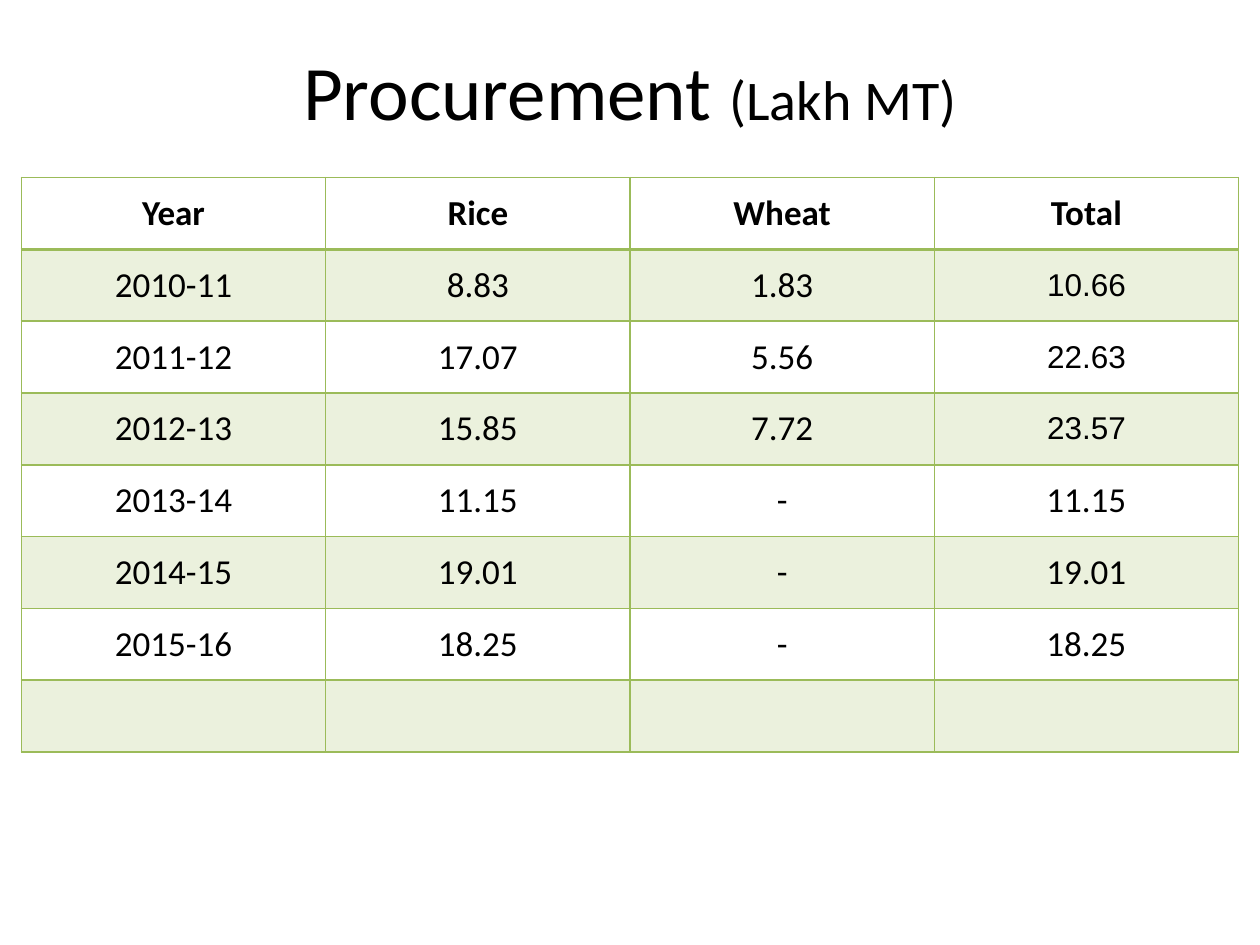
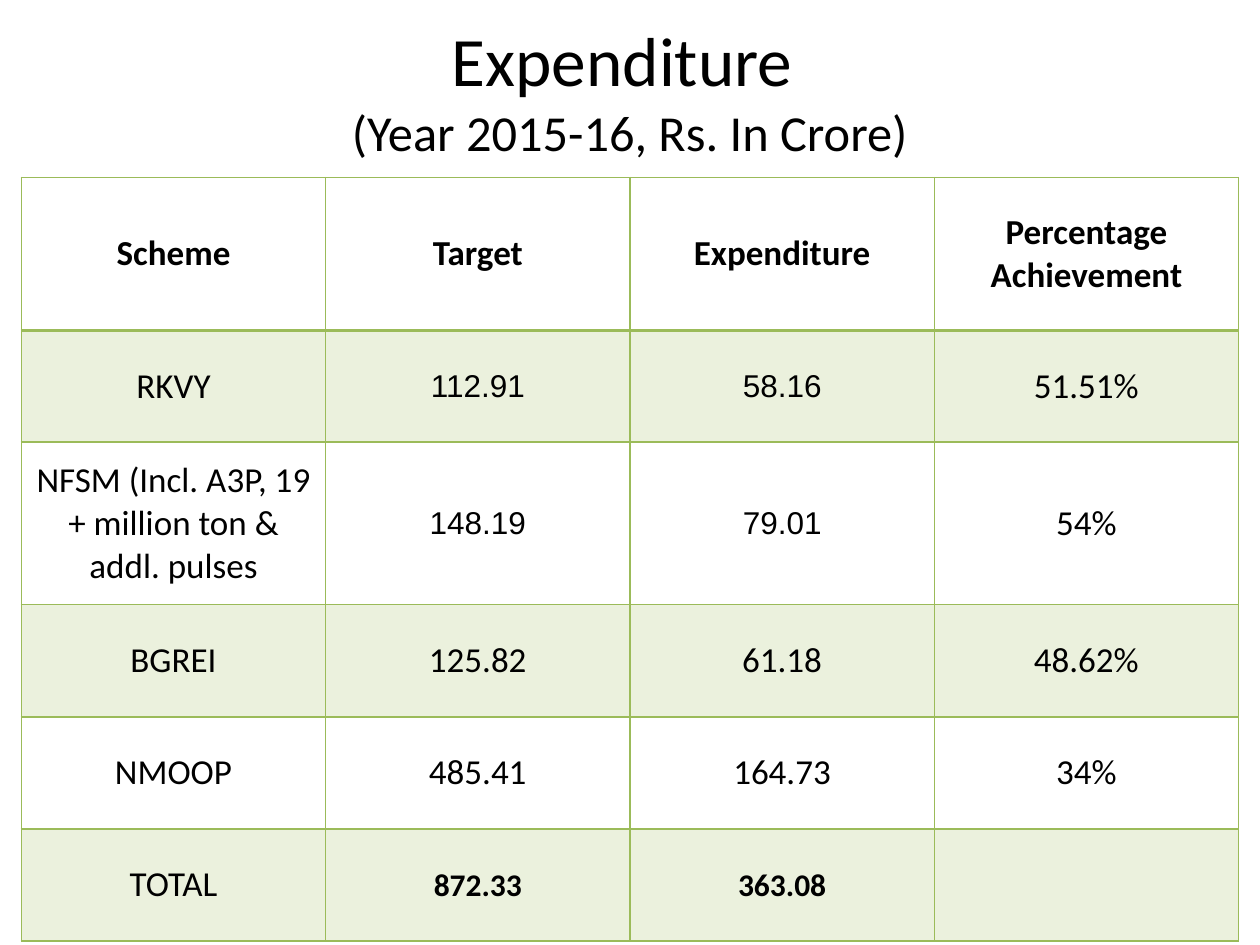
"""Build two slides of crop procurement and scheme expenditure tables."""
from lxml import etree
from pptx import Presentation
from pptx.dml import color
from pptx.enum import text
from pptx.oxml import ns
from pptx.util import Inches, Pt

GREEN, BLACK = "9BBB59", "000000"
BAND_OPACITY = 20
CENTER, MIDDLE = text.PP_ALIGN.CENTER, text.MSO_ANCHOR.MIDDLE


def style_run(run, size, font="Calibri", bold=False):
    run.font.size = Pt(size)
    run.font.name = font
    run.font.bold = bold
    run.font.color.rgb = color.RGBColor.from_string(BLACK)


def add_border(cell, side, points):
    line = etree.SubElement(cell._tc.get_or_add_tcPr(), ns.qn(f"a:ln{side}"), w=str(Pt(points)))
    paint = etree.SubElement(line, ns.qn("a:solidFill"))
    etree.SubElement(paint, ns.qn("a:srgbClr"), val=GREEN)


pages = [
    {
        "title": "Procurement \t(Lakh MT)".split("\t"),
        "title_break": "",
        "title_sizes": (44, 32),
        "heights": [0.57] * 8,
        "rows": [
            ("Year", "Rice", "Wheat", "Total"),
            ("2010-11", "8.83", "1.83", "10.66"),
            ("2011-12", "17.07", "5.56", "22.63"),
            ("2012-13", "15.85", "7.72", "23.57"),
            ("2013-14", "11.15", "-", "11.15"),
            ("2014-15", "19.01", "-", "19.01"),
            ("2015-16", "18.25", "-", "18.25"),
            ("", "", "", ""),
        ],
        "arial": {(1, 3), (2, 3), (3, 3)},
        "sums": set(),
    },
    {
        "title": ["Expenditure ", "(Year 2015-16, Rs. In Crore)"],
        "title_break": "\v",
        "title_sizes": (39.6, 28.8),
        "heights": [1.21, 0.89, 1.29, 0.89, 0.89, 0.89],
        "rows": [
            ("Scheme", "Target", "Expenditure", "Percentage Achievement"),
            ("RKVY", "112.91", "58.16", "51.51%"),
            ("NFSM (Incl. A3P, 19 + million ton & addl. pulses", "148.19", "79.01", "54%"),
            ("BGREI", "125.82", "61.18", "48.62%"),
            ("NMOOP", "485.41", "164.73", "34%"),
            ("TOTAL", "872.33", "363.08", ""),
        ],
        "arial": {(1, 1), (1, 2), (2, 1), (2, 2)},
        "sums": {(5, 1), (5, 2)},
    },
]
pages[0]["title"] = ["Procurement ", "(Lakh MT)"]

deck = Presentation()
deck.slide_width, deck.slide_height = Inches(10), Inches(7.5)

for page in pages:
    slide = deck.slides.add_slide(deck.slide_layouts[6])

    rows, heights = page["rows"], page["heights"]
    table = slide.shapes.add_table(
        len(rows), 4, Inches(0.17), Inches(1.41), Inches(9.66), Inches(sum(heights))
    ).table
    table.first_row = table.horz_banding = False
    for row, height in zip(table.rows, heights):
        row.height = Inches(height)

    for r, values in enumerate(rows):
        for c, value in enumerate(values):
            cell = table.cell(r, c)
            cell.vertical_anchor = MIDDLE
            for side in "LRTB":
                heavy = (r == 0 and side == "B") or (r == 1 and side == "T")
                add_border(cell, side, 2 if heavy else 1)
            if r % 2:
                cell.fill.solid()
                cell.fill.fore_color.rgb = color.RGBColor.from_string(GREEN)
                tint = cell._tc.tcPr.find(ns.qn("a:solidFill"))[0]
                etree.SubElement(tint, ns.qn("a:alpha"), val=str(BAND_OPACITY * 1000))
            else:
                cell.fill.background()
            if not value:
                continue

            is_arial, is_sum = (r, c) in page["arial"], (r, c) in page["sums"]
            if is_sum:
                cell.margin_left = cell.margin_right = cell.margin_top = Inches(0.01)
                cell.margin_bottom = 0
            cell.text_frame.text = value
            paragraph = cell.text_frame.paragraphs[0]
            paragraph.alignment = CENTER
            style_run(
                paragraph.runs[0],
                18 if is_arial or is_sum else 20,
                "Arial" if is_arial else "Calibri",
                r == 0 or is_sum,
            )

    title = slide.shapes.add_textbox(Inches(0.5), Inches(0.17), Inches(9), Inches(1.08)).text_frame
    title.word_wrap = True
    title.vertical_anchor = MIDDLE
    heading = title.paragraphs[0]
    heading.alignment = CENTER
    for part, size in zip(page["title"], page["title_sizes"]):
        if heading.runs and page["title_break"]:
            heading.add_line_break()
        run = heading.add_run()
        run.text = part
        style_run(run, size)

deck.save("out.pptx")
